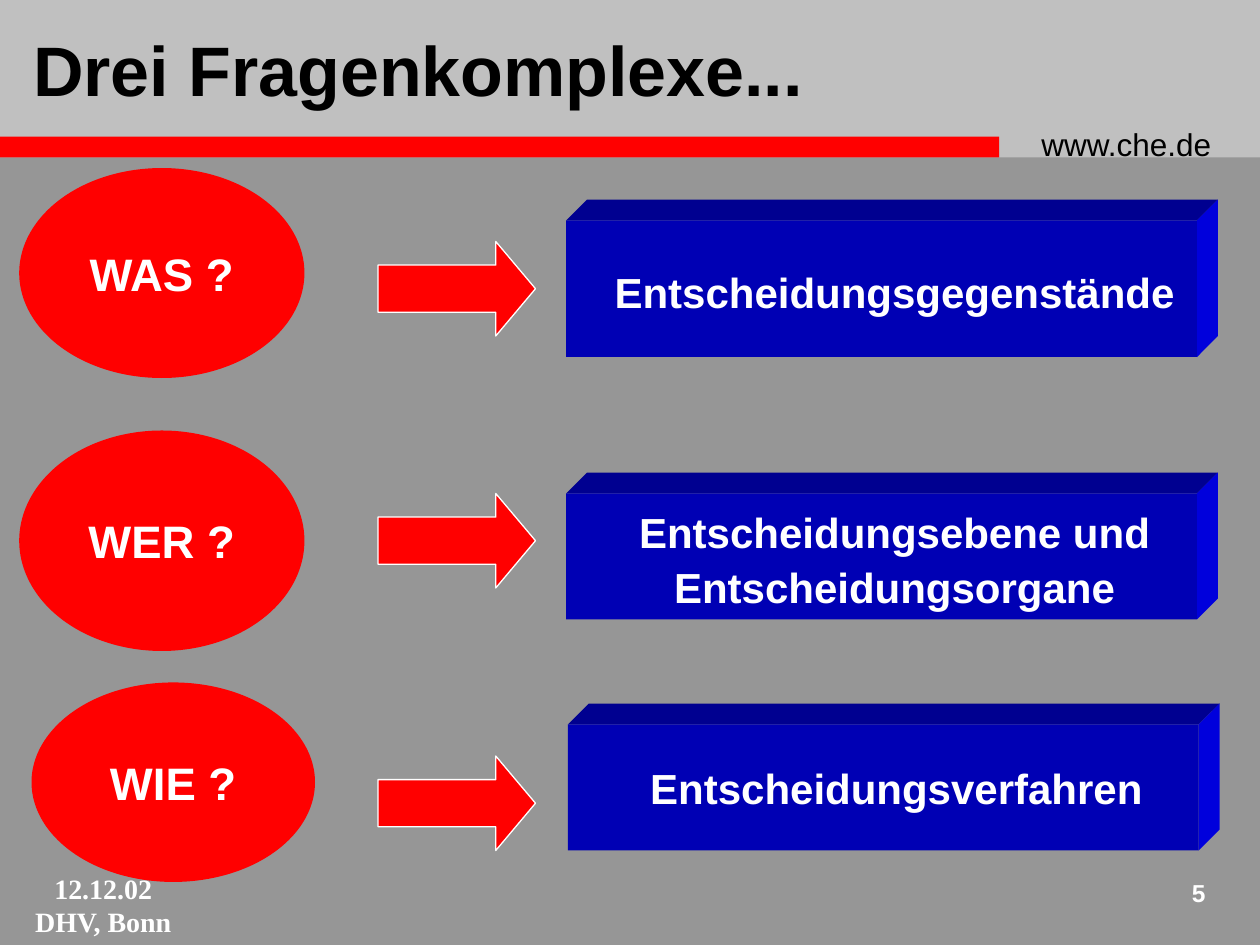
from pptx import Presentation
from pptx.dml.color import RGBColor
from pptx.enum.shapes import MSO_SHAPE
from pptx.enum.text import MSO_ANCHOR, PP_ALIGN
from pptx.util import Pt

COLORS = {
    "background": "969696", "header": "C0C0C0", "red": "FF0000",
    "front": "0000B4", "top": "000090", "side": "0000DC",
    "white": "FFFFFF", "black": "000000",
}
DEPTH = 12


def paint(shape, fill, line=None):
    shape.shadow.inherit = False
    shape.fill.solid()
    shape.fill.fore_color.rgb = RGBColor.from_string(COLORS[fill])
    if line:
        shape.line.color.rgb = RGBColor.from_string(COLORS[line])
        shape.line.width = Pt(0.75)
    else:
        shape.line.fill.background()


def write(box, text, size, color="white", align=PP_ALIGN.CENTER, bold=True,
          font="Arial", anchor=MSO_ANCHOR.MIDDLE, wrap=False):
    frame = box.text_frame
    frame.text = text
    frame.word_wrap = wrap
    frame.vertical_anchor = anchor
    for para in frame.paragraphs:
        para.alignment = align
        for span in para.runs:
            span.font.name = font
            span.font.size = Pt(size)
            span.font.bold = bold
            span.font.color.rgb = RGBColor.from_string(COLORS[color])


deck = Presentation()
deck.slide_width, deck.slide_height = Pt(720), Pt(540)
page = deck.slides.add_slide(deck.slide_layouts[6])
page.background.fill.solid()
page.background.fill.fore_color.rgb = RGBColor.from_string(COLORS["background"])
shapes = page.shapes

header = shapes.add_shape(MSO_SHAPE.RECTANGLE, Pt(0), Pt(0), Pt(720), Pt(90))
paint(header, "header")
stripe = shapes.add_shape(MSO_SHAPE.RECTANGLE, Pt(0), Pt(78), Pt(571), Pt(12))
paint(stripe, "red")

address = shapes.add_textbox(Pt(588), Pt(67.7), Pt(126), Pt(29))
write(address, "www.che.de", 18, "black", PP_ALIGN.LEFT, bold=False,
      anchor=MSO_ANCHOR.TOP, wrap=True)
footer = shapes.add_textbox(Pt(12), Pt(494), Pt(94), Pt(46))
write(footer, "12.12.02\nDHV, Bonn", 16, font="Times New Roman")
number = shapes.add_textbox(Pt(654), Pt(498), Pt(42), Pt(30))
write(number, "5", 14, align=PP_ALIGN.RIGHT, anchor=MSO_ANCHOR.TOP, wrap=True)
title = shapes.add_textbox(Pt(12), Pt(0), Pt(582), Pt(78))
write(title, "Drei Fragenkomplexe...", 40, "black", PP_ALIGN.LEFT, wrap=True)

answers = [
    ("Entscheidungsgegenstände", 323.5, 126, 78, 1.1),
    ("Entscheidungsebene und\nEntscheidungsorgane", 323.5, 282, 72, 1.1),
    ("Entscheidungsverfahren", 324.5, 414, 72, 1),
]
for text, left, top, height, spacing in answers:
    right, bottom = left + 360.5, top + height
    faces = [
        ("top", [(left, top), (left + DEPTH, top - DEPTH),
                 (right + DEPTH, top - DEPTH), (right, top)]),
        ("side", [(right, top), (right + DEPTH, top - DEPTH),
                  (right + DEPTH, bottom - DEPTH), (right, bottom)]),
    ]
    for color, corners in faces:
        points = [(Pt(x), Pt(y)) for x, y in corners]
        builder = shapes.build_freeform(*points[0])
        builder.add_line_segments(points[1:], close=True)
        paint(builder.convert_to_shape(), color)
    block = shapes.add_shape(MSO_SHAPE.RECTANGLE, Pt(left), Pt(top),
                             Pt(right - left), Pt(height))
    paint(block, "front")
    write(block, text, 24)
    for para in block.text_frame.paragraphs:
        para.line_spacing = spacing
        para._p.get_or_add_pPr().set("marL", str(Pt(15)))

questions = [
    ("WAS ?", 11, 96, 163, 120, 138),
    ("WER ?", 11, 246, 163, 126, 282),
    ("WIE ?", 18, 390, 162, 114, 432),
]
for text, left, top, width, height, arrow_top in questions:
    ellipse = shapes.add_shape(MSO_SHAPE.OVAL, Pt(left), Pt(top), Pt(width), Pt(height))
    paint(ellipse, "red")
    write(ellipse, text, 26)
    arrow = shapes.add_shape(MSO_SHAPE.RIGHT_ARROW, Pt(216), Pt(arrow_top), Pt(90), Pt(54))
    arrow.adjustments[1] = 0.42
    paint(arrow, "red", "white")

deck.save("out.pptx")
